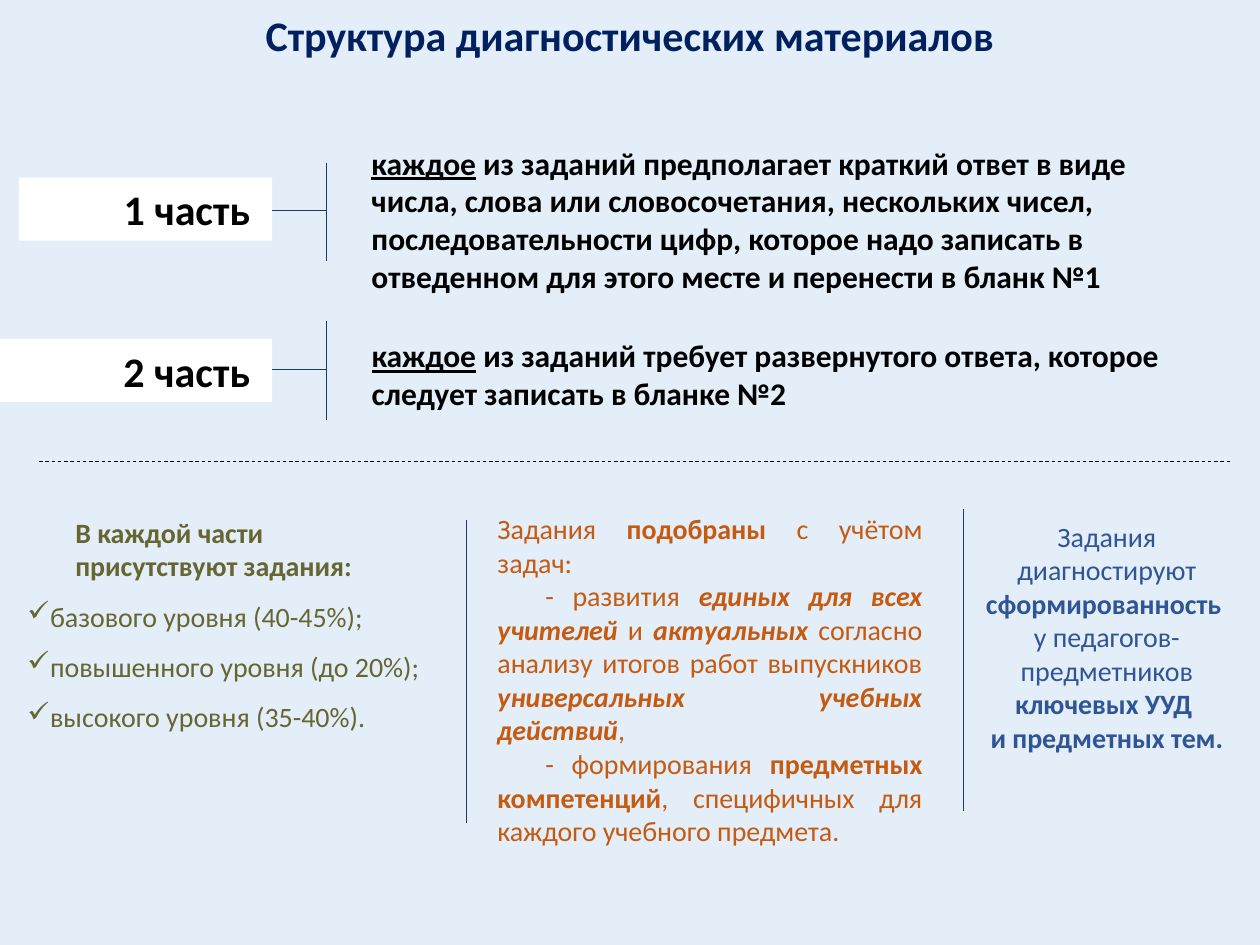
from lxml import etree
from pptx import Presentation
from pptx.dml.color import RGBColor
from pptx.enum.dml import MSO_LINE
from pptx.enum.shapes import MSO_CONNECTOR, MSO_SHAPE
from pptx.enum.text import MSO_ANCHOR, PP_ALIGN
from pptx.oxml.ns import qn
from pptx.util import Inches, Pt

LEFT, CENTER, RIGHT, JUSTIFY = PP_ALIGN.LEFT, PP_ALIGN.CENTER, PP_ALIGN.RIGHT, PP_ALIGN.JUSTIFY
TOP, MIDDLE = MSO_ANCHOR.TOP, MSO_ANCHOR.MIDDLE
RECTANGLE, STRAIGHT, DASH = MSO_SHAPE.RECTANGLE, MSO_CONNECTOR.STRAIGHT, MSO_LINE.DASH
color = RGBColor.from_string

presentation = Presentation()
presentation.slide_width, presentation.slide_height = Inches(10), Inches(7.5)
column = presentation.slide_width / 100
row = presentation.slide_height / 75
slide = presentation.slides.add_slide(presentation.slide_layouts[6])
slide.background.fill.solid()
slide.background.fill.fore_color.rgb = color("E3EEF8")


def write(shape, paragraphs, size, hue, align, anchor=TOP):
    frame = shape.text_frame
    frame.word_wrap = True
    frame.vertical_anchor = anchor
    for index, pieces in enumerate(paragraphs):
        paragraph = frame.paragraphs[0] if index == 0 else frame.add_paragraph()
        paragraph.alignment = align
        for text, style in pieces:
            run = paragraph.add_run()
            run.text = text.rstrip("\n")
            font = run.font
            font.name, font.size, font.color.rgb = "Calibri", Pt(size), color(hue)
            font.bold, font.italic, font.underline = "b" in style, "i" in style, "u" in style
            if text.endswith("\n"):
                paragraph.add_line_break()
    return frame.paragraphs


def add_line(x1, y1, x2, y2, hue="203864"):
    ends = [int(x1 * column), int(y1 * row), int(x2 * column), int(y2 * row)]
    connector = slide.shapes.add_connector(STRAIGHT, *ends)
    connector.line.color.rgb = color(hue)
    connector.line.width = Pt(0.5)
    etree.SubElement(connector._element.spPr, qn("a:effectLst"))
    return connector


title = [[("Структура диагностических материалов", "b")]]
first_answer = [[
    ("каждое", "bu"),
    (" из заданий предполагает краткий ответ в виде числа, слова или словосочетания, "
     "нескольких чисел, последовательности цифр, которое надо записать в отведенном "
     "для этого месте и перенести в бланк №1", "b"),
]]
second_answer = [[
    ("каждое", "bu"),
    (" из заданий требует развернутого ответа, которое следует записать в бланке №2", "b"),
]]
levels = [
    [("В каждой части", "b")],
    [("присутствуют задания:", "b")],
    [("базового уровня (40-45%); ", "")],
    [("повышенного уровня (до 20%); ", "")],
    [("высокого уровня (35-40%). ", "")],
]
goals = [
    [("Задания ", ""), ("подобраны ", "b"), ("с учётом задач:", "")],
    [
        ("- развития ", ""), ("единых для всех учителей", "bi"), (" и ", ""),
        ("актуальных", "bi"), (" согласно анализу итогов работ выпускников ", ""),
        ("универсальных учебных действий", "bi"), (", ", ""),
    ],
    [
        ("- формирования ", ""), ("предметных компетенций", "b"),
        (", специфичных для каждого учебного предмета. ", ""),
    ],
]
diagnostics = [
    [
        ("Задания диагностируют ", ""), ("сформированность \n", "b"),
        ("у педагогов-предметников ", ""), ("ключевых УУД ", "b"),
    ],
    [("и предметных тем.", "b")],
]

text_blocks = [
    (0, 0, 100, 5.3, title, 24, "002060", CENTER),
    (28.5, 10.9, 64.7, 13.1, first_answer, 18, "000000", LEFT),
    (28.5, 26.2, 66.1, 7.1, second_answer, 18, "000000", LEFT),
    (1.2, 40.4, 44.6, 18.5, levels, 16, "666633", LEFT),
    (38.5, 40.1, 35.7, 27.9, goals, 16, "C55A11", JUSTIFY),
    (76.7, 40.7, 22.3, 19.9, diagnostics, 16, "2F5597", CENTER),
]
written = []
for x, y, width, height, paragraphs, size, hue, align in text_blocks:
    box = slide.shapes.add_textbox(
        int(x * column), int(y * row), int(width * column), int(height * row))
    written.append(write(box, paragraphs, size, hue, align))

title_lines, _, _, level_lines, goal_lines, _ = written
title_lines[0].line_spacing = 1.07
for paragraph in level_lines[:2] + goal_lines[1:]:
    paragraph._p.get_or_add_pPr().set("indent", str(int(3.8 * column)))
for paragraph in level_lines[2:]:
    paragraph.alignment = JUSTIFY
    paragraph.line_spacing = 1.5
    properties = paragraph._p.get_or_add_pPr()
    properties.set("marL", str(int(1.8 * column)))
    properties.set("indent", str(int(-1.8 * column)))
    etree.SubElement(properties, qn("a:buChar")).set("char", "✓")

parts = [("1 часть ", 1.5, 14.1, 16.7, 12.9), ("2 часть ", 0, 26.9, 29.3, 25.5)]
for label, x, y, stem, bracket in parts:
    part = slide.shapes.add_shape(
        RECTANGLE, int(x * column), int(y * row), int((21.6 - x) * column), int(5 * row))
    part.shadow.inherit = False
    part.fill.solid()
    part.fill.fore_color.rgb = color("FFFFFF")
    part.line.fill.background()
    write(part, [[(label, "b")]], 24, "000000", RIGHT, MIDDLE)
    add_line(21.6, stem, 25.9, stem)
    add_line(25.9, bracket, 25.9, bracket + 7.8)

add_line(3.1, 36.6, 97.8, 36.6, "000000").line.dash_style = DASH
for x, y in [(37, 41.3), (76.5, 40.4)]:
    add_line(x, y, x, y + 24)

presentation.save("out.pptx")
